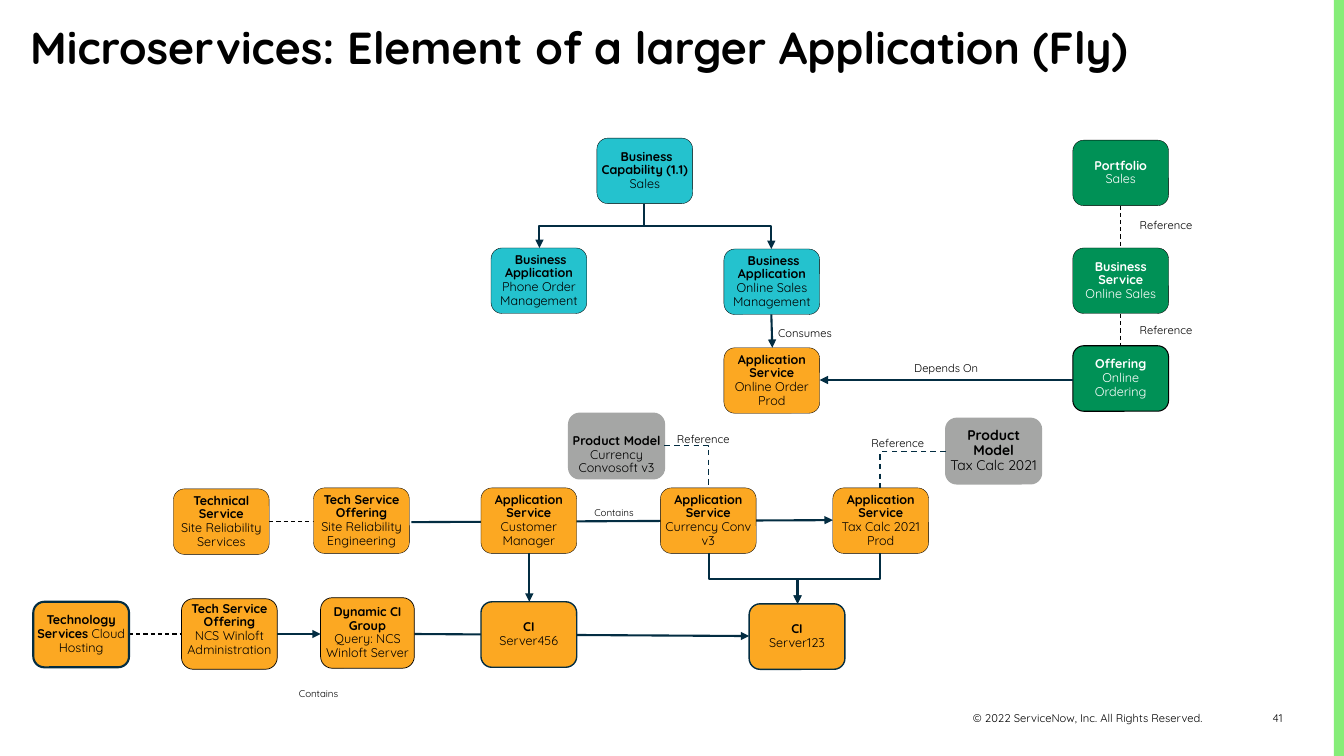
"""Build the slide that maps microservices within a larger application."""
import pptx
import pptx.util
import pptx.dml.color
import pptx.enum.dml
import pptx.enum.shapes
import pptx.enum.text
import pptx.oxml
import pptx.oxml.ns

PX = 9144
FONT = "Quicksand"
BLACK, WHITE, NAVY = "000000", "FFFFFF", "032D42"
TEAL, GOLD, GREEN, GRAY = "24C2CE", "FCA822", "009156", "A5A6A5"
ALIGN = pptx.enum.text.PP_ALIGN
ANCHOR = pptx.enum.text.MSO_ANCHOR
SHAPE = pptx.enum.shapes.MSO_SHAPE
LINK = pptx.enum.shapes.MSO_CONNECTOR
BOX_W, BOX_H = 95, 65

BOXES = [
    (592, 137, TEAL, BLACK, 0.25, " Business Capability (1.1)", "Sales"),
    (718, 247, TEAL, BLACK, 0.25, " Business Application", "Online Sales Management"),
    (487, 246, TEAL, BLACK, 0.25, " Business Application", "Phone Order Management"),
    (718, 345, GOLD, BLACK, 0.25, "Application Service", "Online Order Prod"),
    (172, 485, GOLD, BLACK, 0.25, "Technical Service", "Site Reliability Services"),
    (311, 484, GOLD, BLACK, 0.25, "Tech Service Offering", "Site Reliability Engineering"),
    (477, 484, GOLD, BLACK, 0.25, "Application Service", "Customer Manager"),
    (655, 484, GOLD, BLACK, 0.25, "Application Service", "Currency Conv v3"),
    (826, 484, GOLD, BLACK, 0.25, "Application Service", "Tax Calc 2021 Prod"),
    (477, 597, GOLD, NAVY, 1, "CI", "Server456"),
    (743, 599, GOLD, NAVY, 1, "CI", "Server123"),
    (1064, 139, GREEN, BLACK, 0.25, "Portfolio", "Sales"),
    (1064, 246, GREEN, BLACK, 0.25, "Business Service", "Online Sales"),
    (1064, 343, GREEN, BLACK, 0.75, "Offering", "Online Ordering"),
]
LABELS = [
    (740, 319, 117, 8, "Consumes"),
    (880, 354, 117, 8, "Depends On"),
    (1098, 212, 117, 8, "Reference"),
    (1098, 316, 117, 8, "Reference"),
    (639, 424, 117, 8, "Reference"),
    (832, 428, 117, 8, "Reference"),
    (559, 498, 100, 7, "Contains"),
    (266, 677, 100, 7, "Contains"),
]
ARROWS = [
    (1064, 377, 813, 377),
    (765, 312, 766, 345),
    (525, 549, 525, 597),
    (275, 629, 318, 629),
]
DROPS = [
    (639, 202, 765, 247),
    (639, 202, 535, 246),
    (873, 549, 791, 599),
    (703, 549, 791, 599),
]
BENDS = [(659, 442, 703, 484), (938, 448, 873, 484)]


def px(*nums):
    """Turn px lengths into EMU."""
    return [pptx.util.Emu(round(num * PX)) for num in nums]


def hue(code):
    """Turn a hex string into a colour."""
    return pptx.dml.color.RGBColor.from_string(code)


def add_run(para, text, size, color=BLACK, bold=False):
    """Add one styled run to a paragraph."""
    run = para.add_run()
    run.text = text
    font = run.font
    font.name, font.size, font.bold = FONT, pptx.util.Pt(size), bold
    font.color.rgb = hue(color)


def add_box(slide, left, top, fill, edge, weight, head, body,
            width=BOX_W, height=BOX_H, size=9, anchor=ANCHOR.MIDDLE, inline=False):
    """Add a rounded box with a bold heading and plain detail."""
    box = slide.shapes.add_shape(SHAPE.ROUNDED_RECTANGLE, *px(left, top, width, height))
    box.shadow.inherit = False
    box.fill.solid()
    box.fill.fore_color.rgb = hue(fill)
    box.line.color.rgb = hue(edge)
    box.line.width = pptx.util.Pt(weight)
    frame = box.text_frame
    frame.word_wrap, frame.vertical_anchor = True, anchor
    frame.margin_left = frame.margin_right = frame.margin_top = frame.margin_bottom = 0
    color = WHITE if fill == GREEN else BLACK
    para = frame.paragraphs[0]
    add_run(para, head, size, color, True)
    if not inline:
        para = frame.add_paragraph()
    add_run(para, body, size, color)
    for para in frame.paragraphs:
        para.alignment, para.line_spacing = ALIGN.CENTER, 0.9


def add_label(slide, left, top, width, size, text, align=ALIGN.CENTER, height=24):
    """Add a small text label."""
    frame = slide.shapes.add_textbox(*px(left, top, width, height)).text_frame
    frame.word_wrap = True
    frame.paragraphs[0].alignment = align
    add_run(frame.paragraphs[0], text, size)


def add_line(slide, ends, color=NAVY, weight=1.5, dash=False, kind=LINK.STRAIGHT):
    """Add a connector, dashed or with an arrowhead."""
    wire = slide.shapes.add_connector(kind, *px(*ends))
    wire.line.color.rgb = hue(color)
    wire.line.width = pptx.util.Pt(weight)
    if dash:
        wire.line.dash_style = pptx.enum.dml.MSO_LINE.DASH
    else:
        tail = pptx.oxml.parse_xml(
            f'<a:tailEnd {pptx.oxml.ns.nsdecls("a")} type="triangle"/>')
        wire.line._get_or_add_ln().append(tail)
    props = wire._element.spPr
    props.append(pptx.oxml.parse_xml(f'<a:effectLst {pptx.oxml.ns.nsdecls("a")}/>'))
    return props


def add_drop(slide, x1, y1, x2, y2):
    """Add an elbow arrow that leaves downward and arrives downward."""
    mid_x, mid_y = (x1 + x2) / 2, (y1 + y2) / 2
    side = 1 if x2 > x1 else -1
    half_w, half_h = side * (y2 - y1) / 2, abs(x2 - x1) / 2
    ends = (mid_x + half_w, mid_y - half_h, mid_x - half_w, mid_y + half_h)
    props = add_line(slide, ends, kind=LINK.ELBOW)
    turn = 270 if side > 0 else 90
    props.find(pptx.oxml.ns.qn("a:xfrm")).set("rot", str(turn * 60000))


def add_bend(slide, ends):
    """Add a dashed connector with one corner."""
    props = add_line(slide, ends, weight=1, dash=True, kind=LINK.ELBOW)
    props.find(pptx.oxml.ns.qn("a:prstGeom")).set("prst", "bentConnector2")


def add_title(slide, text):
    """Place and fill the title."""
    title = slide.shapes.title
    title.left, title.top, title.width, title.height = px(20, 15, 1240, 73)
    frame = title.text_frame
    frame.word_wrap, frame.vertical_anchor = True, ANCHOR.TOP
    frame.auto_size = pptx.enum.text.MSO_AUTO_SIZE.NONE
    frame.paragraphs[0].alignment = ALIGN.LEFT
    add_run(frame.paragraphs[0], text, 32, bold=True)


def add_frame(slide):
    """Add the side bar and the footer."""
    bar = slide.shapes.add_shape(SHAPE.RECTANGLE, *px(1323, 0, 10, 750))
    bar.shadow.inherit = False
    bar.fill.solid()
    bar.fill.fore_color.rgb = hue("86ED78")
    bar.line.fill.background()
    add_label(slide, 868, 701, 335, 8,
              "© 2022 ServiceNow, Inc. All Rights Reserved.", ALIGN.RIGHT)
    add_label(slide, 1209, 701, 73, 8, "41", ALIGN.RIGHT)


def main():
    """Build and save the slide."""
    deck = pptx.Presentation()
    deck.slide_width, deck.slide_height = px(1333, 750)
    slide = deck.slides.add_slide(deck.slide_layouts[5])
    add_frame(slide)
    add_title(slide, "Microservices: Element of a larger Application (Fly)")
    add_line(slide, (408, 518, 826, 516))
    add_line(slide, (411, 629, 743, 631))
    for ends in [(1111, 204, 1111, 343), (128, 629, 180, 629), (267, 517, 313, 517)]:
        add_line(slide, ends, BLACK, 0.75, dash=True)
    for box in BOXES:
        add_box(slide, *box)
    add_box(slide, 938, 415, GRAY, GRAY, 1, "Product Model", "Tax Calc 2021", size=10)
    add_box(slide, 564, 410, GRAY, GRAY, 1, "Product Model", "Currency Convosoft v3",
            anchor=ANCHOR.BOTTOM)
    add_box(slide, 180, 594, GOLD, BLACK, 0.5, "Tech Service Offering",
            "NCS Winloft Administration", height=70, anchor=ANCHOR.TOP)
    add_box(slide, 33, 597, GOLD, NAVY, 1.5, "Technology Services ", "Cloud Hosting",
            inline=True)
    add_box(slide, 318, 593, GOLD, BLACK, 0.5, "Dynamic CI Group",
            "Query: NCS Winloft Server", width=93, height=70)
    for ends in ARROWS:
        add_line(slide, ends)
    for ends in DROPS:
        add_drop(slide, *ends)
    for ends in BENDS:
        add_bend(slide, ends)
    for label in LABELS:
        add_label(slide, *label)
    deck.save("out.pptx")


if __name__ == "__main__":
    main()
